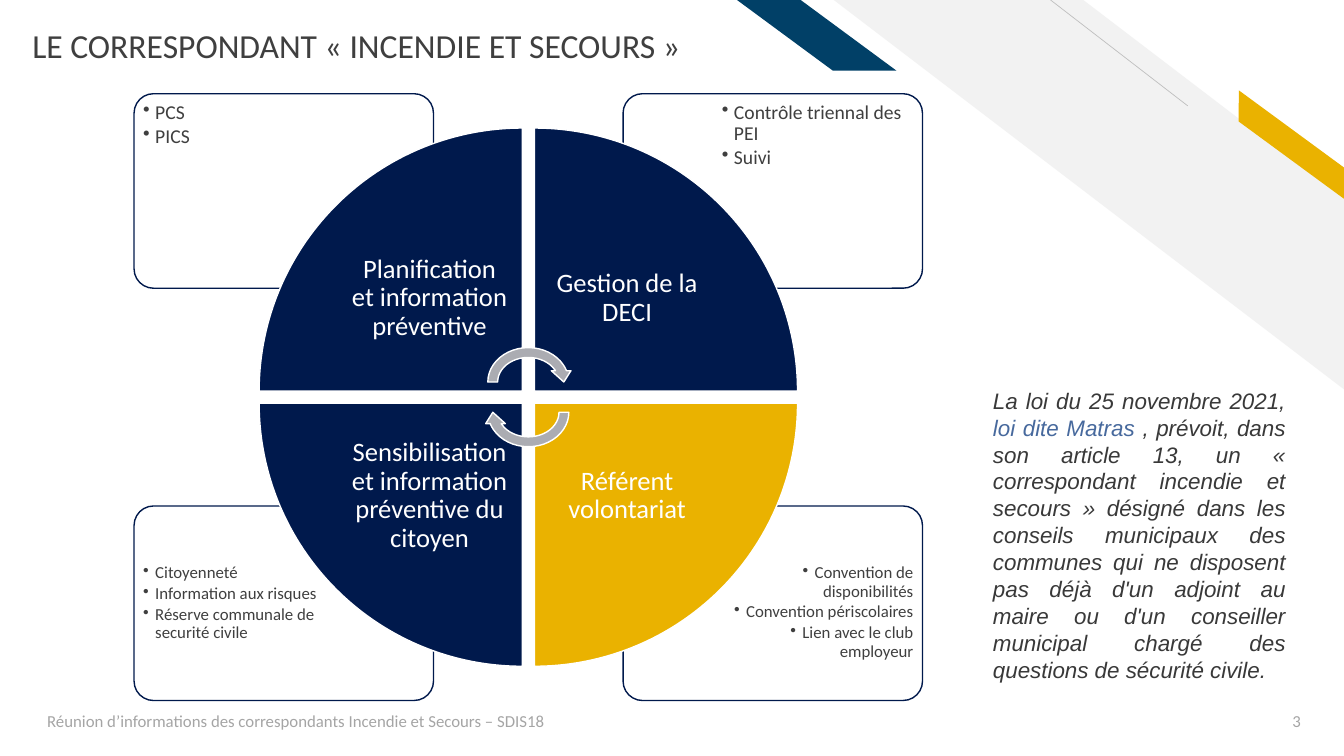
import pptx
import pptx.util
import pptx.dml.color
import pptx.enum.shapes
import pptx.enum.text
import pptx.oxml
import pptx.oxml.ns

SHAPE = pptx.enum.shapes.MSO_SHAPE
ALIGN = pptx.enum.text.PP_ALIGN
ANCHOR = pptx.enum.text.MSO_ANCHOR
NAVY, GOLD, WHITE, DARK, GREY = "00194C", "EAB200", "FFFFFF", "3F3F3F", "A5A5A5"

QUADRANTS = [
    (0, 0, 0, NAVY, "Planification et information préventive", ["PCS", "PICS"], 14),
    (1, 0, 90, NAVY, "Gestion de la DECI", ["Contrôle triennal des PEI", "Suivi"], 14),
    (1, 1, 180, GOLD, "Référent volontariat",
     ["Convention de disponibilités", "Convention périscolaires", "Lien avec le club employeur"], 12),
    (0, 1, 270, NAVY, "Sensibilisation et information préventive du citoyen",
     ["Citoyenneté", "Information aux risques", "Réserve communale de securité civile"], 12),
]
LAW = [
    ("La loi du 25 novembre 2021, ", "393939"),
    ("loi dite Matras", "47699D"),
    (" , prévoit, dans son article 13, un « correspondant incendie et secours » désigné dans "
     "les conseils municipaux des communes qui ne disposent pas déjà d'un adjoint au maire ou "
     "d'un conseiller municipal chargé des questions de sécurité civile.", "393939"),
]


def colour(value):
    return pptx.dml.color.RGBColor.from_string(value)


def inches(box):
    return [pptx.util.Inches(length) for length in box]


def add_shape(page, kind, box, fill, line=None, rotation=0, adjust=None, flip=False):
    shape = page.shapes.add_shape(kind, *inches(box))
    shape.shadow.inherit = False
    shape.fill.solid()
    shape.fill.fore_color.rgb = colour(fill)
    if line:
        shape.line.color.rgb = colour(line)
        shape.line.width = pptx.util.Pt(1)
    else:
        shape.line.fill.background()
    shape.rotation = rotation
    if adjust is not None:
        shape.adjustments[0] = adjust
    if flip:
        shape._element.spPr.xfrm.set("flipH", "1")
    return shape


def style(span, size, shade, name="Calibri", italic=False):
    span.font.size = pptx.util.Pt(size)
    span.font.name = name
    span.font.italic = italic
    span.font.color.rgb = colour(shade)


def add_bullet(para):
    properties = para._p.get_or_add_pPr()
    indent = pptx.util.Inches(0.12)
    properties.set("marL", str(indent))
    properties.set("indent", str(-indent))
    bullet = pptx.oxml.parse_xml(
        '<a:buChar %s char="•"/>' % pptx.oxml.ns.nsdecls("a"))
    properties.append(bullet)


def add_text(page, box, lines, size, shade, align=ALIGN.LEFT, anchor=ANCHOR.TOP,
             inset=None, spacing=1.0, bullets=False):
    frame = page.shapes.add_textbox(*inches(box)).text_frame
    frame.word_wrap = True
    frame.vertical_anchor = anchor
    if inset is not None:
        frame.margin_left = frame.margin_right = pptx.util.Inches(inset)
        frame.margin_top = frame.margin_bottom = pptx.util.Inches(inset)
    frame.text = "\n".join(lines)
    for para in frame.paragraphs:
        if bullets:
            add_bullet(para)
            para.space_after = pptx.util.Pt(2)
        para.alignment = align
        para.line_spacing = spacing
        for span in para.runs:
            style(span, size, shade)


def add_decoration(page, width):
    add_shape(page, SHAPE.DIAGONAL_STRIPE, (width - 5.06, 0, 5.07, 3.87), "F2F2F2",
              adjust=0.512, flip=True)
    line = page.shapes.add_connector(pptx.enum.shapes.MSO_CONNECTOR.STRAIGHT,
                                     *inches((width - 1.55, 1.05, width - 2.91, 0)))
    line.line.color.rgb = colour("BFBFBF")
    line.line.width = pptx.util.Pt(0.5)
    line._element.spPr.append(
        pptx.oxml.parse_xml("<a:effectLst %s/>" % pptx.oxml.ns.nsdecls("a")))
    add_shape(page, SHAPE.PARALLELOGRAM, (width - 1.26, 1.31, 1.48, 0.25), GOLD,
              rotation=36.3, adjust=0.72, flip=True)
    add_shape(page, SHAPE.PARALLELOGRAM, (width - 6.02, 0, 1.58, 0.7), "014067",
              adjust=1.356, flip=True)


def add_title(page, box, text):
    title = page.shapes.title
    title.left, title.top, title.width, title.height = inches(box)
    frame = title.text_frame
    frame.text = text
    frame.auto_size = pptx.enum.text.MSO_AUTO_SIZE.NONE
    frame.vertical_anchor = ANCHOR.TOP
    para = frame.paragraphs[0]
    para.alignment = ALIGN.LEFT
    para.line_spacing = 0.9
    para.space_before = pptx.util.Pt(0)
    style(para.runs[0], 24, DARK)


def add_cycle(page, box):
    left, top, width, height = box
    middle_x, middle_y = left + width / 2, top + height / 2

    def outer(column, row, wide, high, margin=0.0):
        return (left + margin + column * (width - wide - 2 * margin),
                top + margin + row * (height - high - 2 * margin), wide, high)

    def inner(column, row, side, gap=0.06):
        return (middle_x + (gap if column else -gap - side),
                middle_y + (gap if row else -gap - side), side, side)

    for column, row, rotation, fill, label, items, size in QUADRANTS:
        add_shape(page, SHAPE.ROUNDED_RECTANGLE, outer(column, row, 2.97, 1.93), WHITE,
                  NAVY, adjust=0.1)
        align = ALIGN.RIGHT if column and row else ALIGN.LEFT
        add_text(page, outer(column, row, 2, 1.36, 0.04), items, size, DARK, align,
                 inset=0.05, spacing=0.9, bullets=True)
    for column, row, rotation, fill, label, items, size in QUADRANTS:
        add_shape(page, SHAPE.PIE_WEDGE, inner(column, row, 2.61), fill, WHITE, rotation)
        add_text(page, inner(column, row, 1.84), [label], 19, WHITE, ALIGN.CENTER,
                 ANCHOR.MIDDLE, inset=0.15, spacing=0.9)
    for offset, rotation in ((-0.15, 0), (0.15, 180)):
        add_shape(page, SHAPE.CIRCULAR_ARROW,
                  (middle_x - 0.45, middle_y + offset - 0.39, 0.9, 0.78),
                  "ABACB2", WHITE, rotation)


def add_law(page, box):
    frame = page.shapes.add_textbox(*inches(box)).text_frame
    frame.word_wrap = True
    para = frame.paragraphs[0]
    para.alignment = ALIGN.JUSTIFY
    for text, shade in LAW:
        span = para.add_run()
        span.text = text
        style(span, 16, shade, "Arial", True)


def add_footer(page, box, text, number):
    left, top, width, height = box
    add_text(page, (left, top, width / 2, height), [text], 12, GREY, anchor=ANCHOR.MIDDLE)
    add_text(page, (left + width - 0.81, top, 0.81, height), [number], 12, GREY,
             ALIGN.RIGHT, ANCHOR.MIDDLE)


def main():
    deck = pptx.Presentation()
    width, height = 13.33, 7.5
    deck.slide_width, deck.slide_height = inches((width, height))
    page = deck.slides.add_slide(deck.slide_layouts[5])
    add_decoration(page, width)
    add_footer(page, (0.37, 6.95, 12.63, 0.4),
               "Réunion d’informations des correspondants Incendie et Secours – SDIS18", "3")
    add_cycle(page, (1.33, 0.93, 7.82, 6.02))
    add_title(page, (0.22, 0.24, 7.66, 1.38), "LE CORRESPONDANT « INCENDIE ET SECOURS »")
    add_law(page, (9.75, 3.79, 3.1, 3.06))
    deck.save("out.pptx")


if __name__ == "__main__":
    main()
